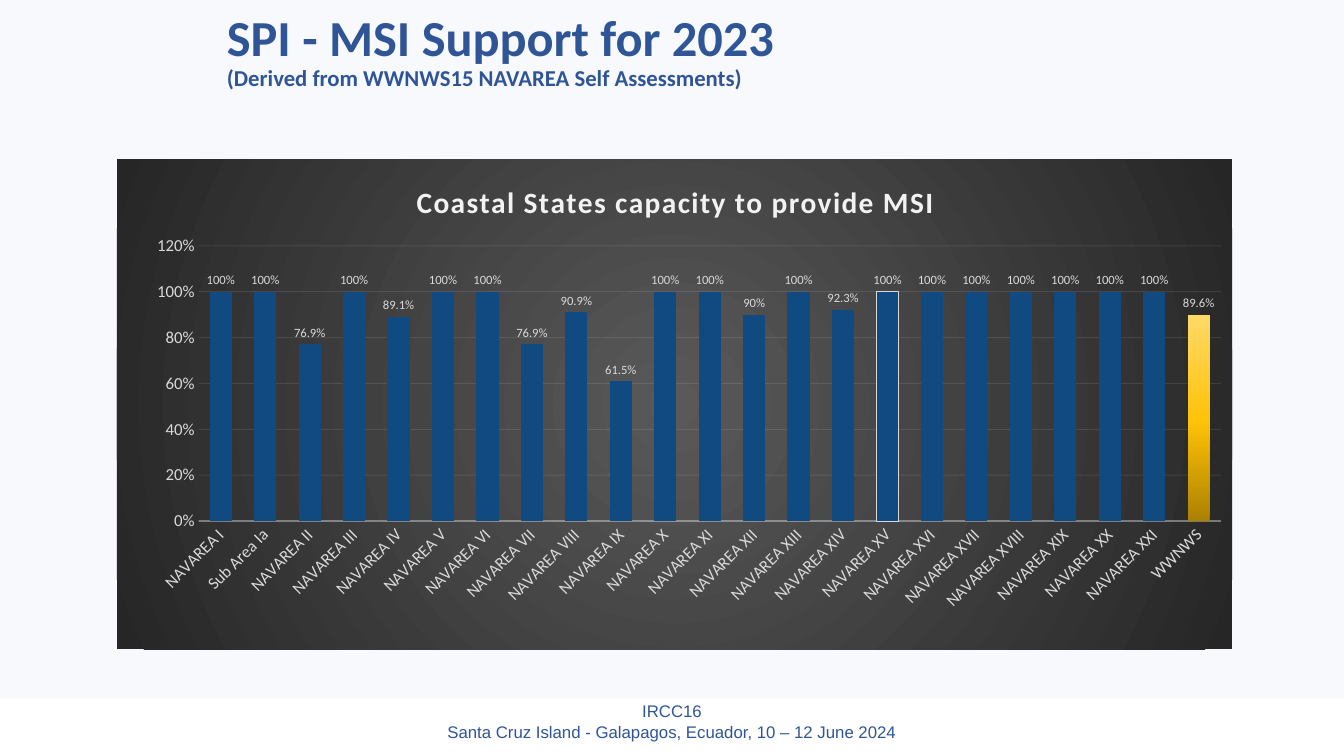
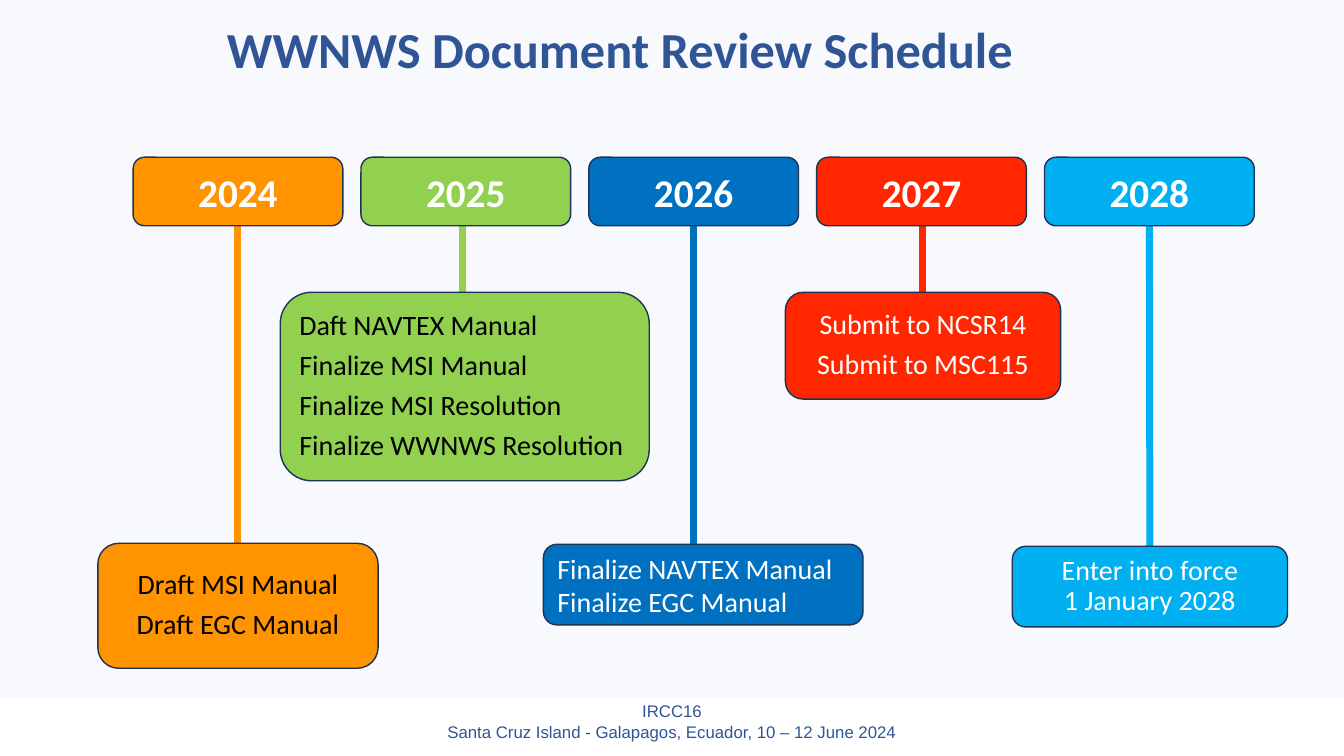
from dataclasses import dataclass

from pptx import Presentation
from pptx.chart.chart import Chart
from pptx.chart.data import CategoryChartData
from pptx.dml.color import RGBColor
from pptx.enum.chart import XL_CHART_TYPE as ChartType
from pptx.enum.chart import XL_LABEL_POSITION as LabelPosition
from pptx.enum.chart import XL_TICK_MARK as TickMark
from pptx.enum.shapes import MSO_CONNECTOR as Connector
from pptx.enum.shapes import MSO_SHAPE as ShapeKind
from pptx.enum.text import MSO_ANCHOR as Anchor
from pptx.enum.text import MSO_AUTO_SIZE as AutoSize
from pptx.enum.text import PP_ALIGN as Align
from pptx.oxml import parse_xml
from pptx.oxml.ns import nsdecls, qn
from pptx.shapes.autoshape import Shape
from pptx.slide import Slide, SlideLayout
from pptx.text.text import Font
from pptx.util import Inches, Pt


@dataclass(frozen=True)
class Theme:
    heading: RGBColor = RGBColor(0x2F, 0x55, 0x97)
    band: RGBColor = RGBColor(0xDA, 0xE3, 0xF3)
    outline: RGBColor = RGBColor(0x1E, 0x32, 0x56)
    black: RGBColor = RGBColor(0, 0, 0)
    white: RGBColor = RGBColor(0xFF, 0xFF, 0xFF)
    orange: RGBColor = RGBColor(0xFF, 0x93, 0x00)
    green: RGBColor = RGBColor(0x92, 0xD0, 0x50)
    blue: RGBColor = RGBColor(0x00, 0x70, 0xC0)
    red: RGBColor = RGBColor(0xFF, 0x26, 0x00)
    sky: RGBColor = RGBColor(0x00, 0xB0, 0xF0)
    bar: RGBColor = RGBColor(0x11, 0x49, 0x81)
    chart_text: RGBColor = RGBColor(0xD9, 0xD9, 0xD9)
    chart_line: RGBColor = RGBColor(0xF2, 0xF2, 0xF2)
    chart_stops: tuple[tuple[int, str], ...] = ((0, "595959"), (100, "262626"))
    total_stops: tuple[tuple[int, str], ...] = (
        (0, "AB8100"), (48, "FFC208"), (100, "FFD966"))
    font: str = "Calibri"
    footer_font: str = "Arial"
    title_size: float = 36
    subtitle_size: float = 16.2
    year_size: float = 28
    card_size: float = 20
    chart_title_size: float = 21
    axis_size: float = 12
    footer_size: float = 12
    label_size: float = 9


THEME = Theme()


@dataclass(frozen=True)
class Milestone:
    year: str
    color: RGBColor
    lines: tuple[str, ...]
    left: float
    top: float
    width: float
    height: float
    text_color: RGBColor = THEME.white
    align: Align = Align.CENTER
    spaced: bool = True
    centered: bool = True
    tucked_stem: float | None = None


MILESTONES = (
    Milestone("2024", THEME.orange, ("Draft MSI Manual", "Draft EGC Manual"),
              0.97, 5.39, 2.78, 1.24, THEME.black),
    Milestone("2025", THEME.green,
              ("Daft NAVTEX Manual", "Finalize MSI Manual",
               "Finalize MSI Resolution", "Finalize WWNWS Resolution"),
              2.78, 2.9, 3.66, 1.87, THEME.black, Align.LEFT,
              tucked_stem=4.59),
    Milestone("2026", THEME.blue,
              ("Finalize NAVTEX Manual", "Finalize EGC Manual"),
              5.39, 5.4, 3.17, 0.8, align=Align.LEFT, spaced=False,
              centered=False),
    Milestone("2027", THEME.red, ("Submit to NCSR14", "Submit to MSC115"),
              7.79, 2.9, 2.73, 1.06, tucked_stem=9.15),
    Milestone("2028", THEME.sky, ("Enter into force\n1 January 2028",),
              10.04, 5.42, 2.73, 0.8),
)

CHART_WIDTH, CHART_HEIGHT = 11.06, 4.86
CAPACITY = {
    "NAVAREA I": "100%", "Sub Area Ia": "100%", "NAVAREA II": "76.9%",
    "NAVAREA III": "100%", "NAVAREA IV": "89.1%", "NAVAREA V": "100%",
    "NAVAREA VI": "100%", "NAVAREA VII": "76.9%", "NAVAREA VIII": "90.9%",
    "NAVAREA IX": "61.5%", "NAVAREA X": "100%", "NAVAREA XI": "100%",
    "NAVAREA XII": "90%", "NAVAREA XIII": "100%", "NAVAREA XIV": "92.3%",
    "NAVAREA XV": "100%", "NAVAREA XVI": "100%", "NAVAREA XVII": "100%",
    "NAVAREA XVIII": "100%", "NAVAREA XIX": "100%", "NAVAREA XX": "100%",
    "NAVAREA XXI": "100%", "WWNWS": "89.6%",
}


def style_font(font: Font, size: float, color: RGBColor,
               bold: bool = False, name: str = THEME.font) -> None:
    font.name = name
    font.size = Pt(size)
    font.bold = bold
    font.color.rgb = color


def set_alpha(color_element, percent: int) -> None:
    color_element.append(
        parse_xml(f'<a:alpha {nsdecls("a")} val="{percent * 1000}"/>'))


def gradient(stops: tuple[tuple[int, str], ...], direction: str):
    stop_xml = "".join(
        f'<a:gs pos="{position * 1000}"><a:srgbClr val="{color}"/></a:gs>'
        for position, color in stops)
    return parse_xml(f'<a:gradFill {nsdecls("a")} rotWithShape="1">'
                     f'<a:gsLst>{stop_xml}</a:gsLst>{direction}</a:gradFill>')


def manual_layout(target: str, **inches: float):
    extents = {"x": CHART_WIDTH, "w": CHART_WIDTH,
               "y": CHART_HEIGHT, "h": CHART_HEIGHT}
    values = "".join(f'<c:{key} val="{value / extents[key]}"/>'
                     for key, value in inches.items())
    return parse_xml(f'<c:layout {nsdecls("c")}><c:manualLayout>{target}'
                     '<c:xMode val="edge"/><c:yMode val="edge"/>'
                     f'{values}</c:manualLayout></c:layout>')


def add_background(slide: Slide, layout: SlideLayout) -> None:
    band = slide.shapes.add_shape(
        ShapeKind.RECTANGLE, 0, 0, Inches(13.33), Inches(6.93))
    band.shadow.inherit = False
    band.fill.solid()
    band.fill.fore_color.rgb = THEME.band
    set_alpha(band.element.spPr.find(f".//{qn('a:srgbClr')}"), 21)
    band.line.fill.background()

    footer = slide.shapes.add_textbox(
        Inches(3.77), Inches(6.93), Inches(5.79), Inches(0.45))
    frame = footer.text_frame
    frame.word_wrap = True
    frame.vertical_anchor = Anchor.MIDDLE
    paragraph = frame.paragraphs[0]
    paragraph.text = ("IRCC16\nSanta Cruz Island - Galapagos, Ecuador, "
                      "10 – 12 June 2024")
    paragraph.alignment = Align.CENTER
    style_font(paragraph.font, THEME.footer_size, THEME.heading,
               name=THEME.footer_font)
    for shape in (footer, band):
        layout.shapes.element.insert(2, shape.element)


def set_title(slide: Slide, text: str) -> None:
    title = slide.shapes.title
    title.left, title.top = Inches(2.15), Inches(0.22)
    title.width, title.height = Inches(10.27), Inches(0.6)
    frame = title.text_frame
    frame.word_wrap = True
    frame.auto_size = AutoSize.NONE
    frame.vertical_anchor = Anchor.MIDDLE
    paragraph = frame.paragraphs[0]
    paragraph.text = text
    paragraph.alignment = Align.LEFT
    paragraph.line_spacing = 0.9
    style_font(paragraph.font, THEME.title_size, THEME.heading, True)
    for run in paragraph.runs[1:]:
        run.font.size = Pt(THEME.subtitle_size)


def style_axes(chart: Chart) -> None:
    category_axis, value_axis = chart.category_axis, chart.value_axis
    value_axis.minimum_scale = 0
    value_axis.maximum_scale = 1.2
    value_axis.major_unit = 0.2
    value_axis.tick_labels.number_format = "0%"
    value_axis.tick_labels.number_format_is_linked = False
    value_axis.format.line.fill.background()
    for line, width in ((category_axis.format.line, 1),
                        (value_axis.major_gridlines.format.line, 0.75)):
        line.color.rgb = THEME.chart_line
        line.width = Pt(width)
    for axis in (category_axis, value_axis):
        axis.major_tick_mark = axis.minor_tick_mark = TickMark.NONE
        style_font(axis.tick_labels.font, THEME.axis_size, THEME.chart_text)

    root, names = chart.element, chart.element.nsmap
    set_alpha(root.find(".//c:catAx/c:spPr//a:srgbClr", names), 54)
    set_alpha(root.find(".//c:majorGridlines//a:srgbClr", names), 10)
    root.find(".//c:catAx/c:txPr/a:bodyPr", names).set("rot", "-2700000")


def style_bars(chart: Chart) -> None:
    plot = chart.plots[0]
    plot.vary_by_categories = False
    plot.gap_width = 100
    plot.overlap = -26
    series = plot.series[0]
    series.format.fill.solid()
    series.format.fill.fore_color.rgb = THEME.bar
    categories = list(CAPACITY)
    outlined = series.points[categories.index("NAVAREA XV")].format
    outlined.fill.solid()
    outlined.fill.fore_color.rgb = THEME.bar
    outlined.line.color.rgb = THEME.chart_text
    outlined.line.width = Pt(0.5)
    series.points[categories.index("WWNWS")].format.fill.gradient()
    placeholder = chart.element.find(f".//{qn('a:gradFill')}")
    placeholder.getparent().replace(
        placeholder,
        gradient(THEME.total_stops, '<a:lin ang="16200000" scaled="0"/>'))

    labels = series.data_labels
    labels.show_value = True
    labels.position = LabelPosition.OUTSIDE_END
    labels.number_format = "0%"
    labels.number_format_is_linked = False
    style_font(labels.font, THEME.label_size, THEME.chart_text)
    for index, text in enumerate(CAPACITY.values()):
        if "." in text:
            label = series.points[index].data_label
            run = label.text_frame.paragraphs[0].add_run()
            run.text = text
            style_font(run.font, THEME.label_size, THEME.chart_text)
            label.position = LabelPosition.OUTSIDE_END


def style_chart_frame(chart: Chart) -> None:
    names = chart.element.nsmap
    paragraph = chart.chart_title.text_frame.paragraphs[0]
    paragraph.text = "Coastal States capacity to provide MSI"
    style_font(paragraph.font, THEME.chart_title_size, THEME.chart_line, True)
    title = chart.element.find(".//c:title", names)
    title.find(".//a:defRPr", names).set("spc", "100")
    plot_area = chart.element.find(".//c:plotArea", names)
    for parent in (title, plot_area):
        for layout in parent.findall("c:layout", names):
            parent.remove(layout)
    title.find("c:tx", names).addnext(manual_layout("", x=2.92, y=0.17))
    plot_area.insert(0, manual_layout('<c:layoutTarget val="inner"/>',
                                      x=0.81, y=0.86, w=10.14, h=2.73))

    properties = parse_xml(f'<c:spPr {nsdecls("c", "a")}>'
                           '<a:ln><a:noFill/></a:ln></c:spPr>')
    properties.insert(0, gradient(
        THEME.chart_stops,
        '<a:path path="circle"><a:fillToRect l="50000" t="50000" '
        'r="50000" b="50000"/></a:path>'))
    chart.element.find("c:chart", names).addnext(properties)


def build_support_slide(slide: Slide) -> None:
    set_title(slide, "SPI - MSI Support for 2023\n"
                     "(Derived from WWNWS15 NAVAREA Self Assessments)")
    data = CategoryChartData(number_format="0%")
    data.categories = list(CAPACITY)
    data.add_series("Series 1", [round(float(text.rstrip("%")) / 100, 2)
                                 for text in CAPACITY.values()])
    chart = slide.shapes.add_chart(
        ChartType.COLUMN_CLUSTERED, Inches(1.16), Inches(1.58),
        Inches(CHART_WIDTH), Inches(CHART_HEIGHT), data).chart
    chart.has_legend = False
    chart.has_title = True
    style_font(chart.font, 10, THEME.black)
    style_axes(chart)
    style_bars(chart)
    style_chart_frame(chart)


def add_box(slide: Slide, left: float, top: float, width: float,
            height: float, fill: RGBColor) -> Shape:
    box = slide.shapes.add_shape(
        ShapeKind.ROUNDED_RECTANGLE, Inches(left), Inches(top),
        Inches(width), Inches(height))
    box.shadow.inherit = False
    box.fill.solid()
    box.fill.fore_color.rgb = fill
    box.line.color.rgb = THEME.outline
    box.line.width = Pt(1)
    box.text_frame.word_wrap = True
    box.text_frame.vertical_anchor = Anchor.MIDDLE
    return box


def add_milestone(slide: Slide, milestone: Milestone, left: float) -> None:
    top, width, height = 1.56, 2.08, 0.68
    tucked = milestone.tucked_stem is not None
    stem_x = milestone.tucked_stem if tucked else left + width / 2
    start, end = (1.95, 3.81) if tucked else (top + height, milestone.top)
    stem = slide.shapes.add_connector(
        Connector.STRAIGHT, Inches(stem_x), Inches(start),
        Inches(stem_x), Inches(end))
    stem.line.color.rgb = milestone.color
    stem.line.width = Pt(5)
    stem.element.spPr.append(parse_xml(f'<a:effectLst {nsdecls("a")}/>'))

    header = add_box(slide, left, top, width, height, milestone.color)
    paragraph = header.text_frame.paragraphs[0]
    paragraph.text = milestone.year
    paragraph.alignment = Align.CENTER
    style_font(paragraph.font, THEME.year_size, THEME.white, True)

    card = add_box(slide, milestone.left, milestone.top, milestone.width,
                   milestone.height, milestone.color)
    frame = card.text_frame
    for index, line in enumerate(milestone.lines):
        paragraph = frame.add_paragraph() if index else frame.paragraphs[0]
        paragraph.text = line
        paragraph.alignment = milestone.align
        if milestone.spaced:
            paragraph.line_spacing = 0.9
            paragraph.space_after = Pt(7)
        style_font(paragraph.font, THEME.card_size, milestone.text_color)

    if not tucked:
        stem.begin_connect(header, 2)
        if milestone.centered:
            stem.end_connect(card, 0)


def main() -> None:
    presentation = Presentation()
    presentation.slide_width = Inches(13.33)
    presentation.slide_height = Inches(7.5)
    layout = presentation.slide_layouts.get_by_name("Title Only")
    support, schedule = (presentation.slides.add_slide(layout)
                         for _ in range(2))
    add_background(support, layout)
    build_support_slide(support)
    set_title(schedule, "WWNWS Document Review Schedule")
    for index, milestone in enumerate(MILESTONES):
        add_milestone(schedule, milestone, 1.32 + 2.26 * index)
    presentation.save("out.pptx")


if __name__ == "__main__":
    main()
